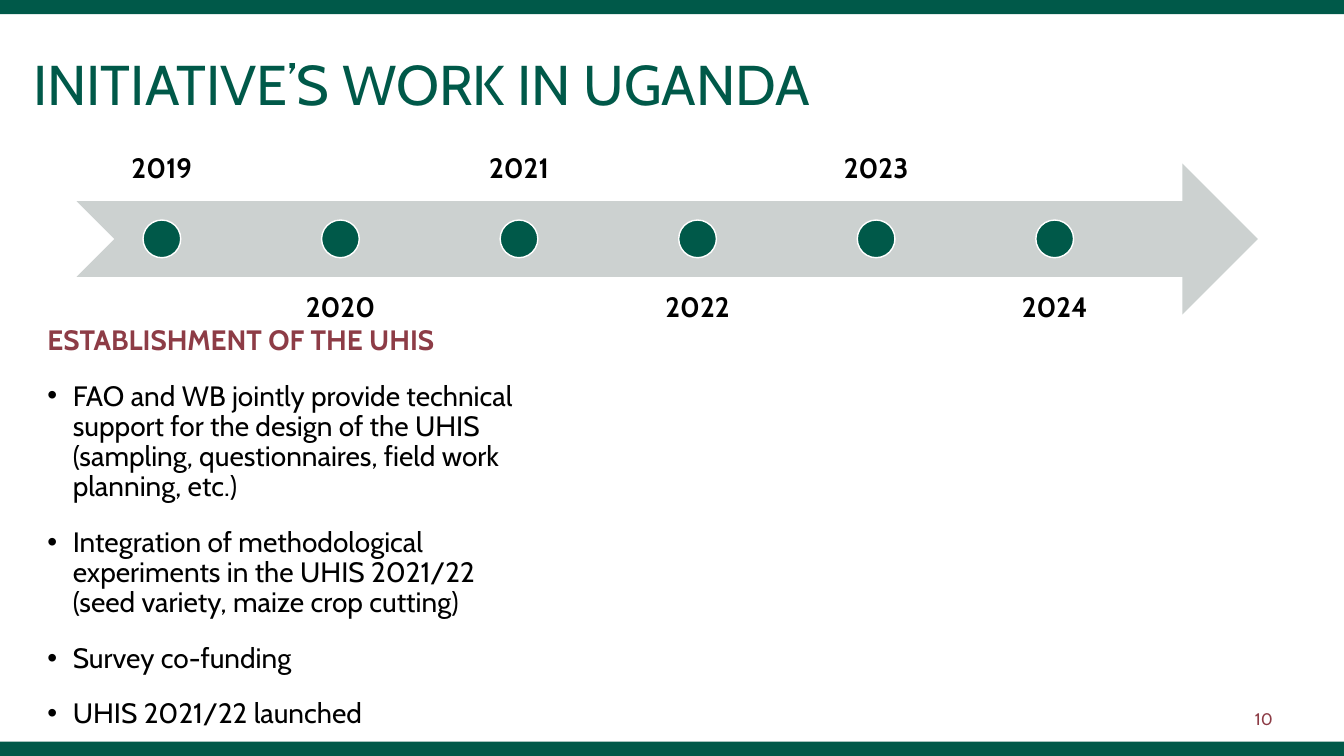
from dataclasses import dataclass

from lxml import etree
from pptx import Presentation
from pptx.dml.color import RGBColor
from pptx.enum.shapes import MSO_SHAPE
from pptx.enum.text import MSO_ANCHOR, MSO_AUTO_SIZE, PP_ALIGN
from pptx.oxml.ns import qn
from pptx.shapes.autoshape import Shape
from pptx.slide import Slide
from pptx.text.text import TextFrame, _Paragraph
from pptx.util import Cm, Pt

RECTANGLE, ELLIPSE = MSO_SHAPE.RECTANGLE, MSO_SHAPE.OVAL
NOTCHED_ARROW = MSO_SHAPE.NOTCHED_RIGHT_ARROW
TOP, MIDDLE, BOTTOM = MSO_ANCHOR.TOP, MSO_ANCHOR.MIDDLE, MSO_ANCHOR.BOTTOM
LEFT, CENTER, RIGHT = PP_ALIGN.LEFT, PP_ALIGN.CENTER, PP_ALIGN.RIGHT
NO_AUTOFIT = MSO_AUTO_SIZE.NONE

GREEN = RGBColor(0x00, 0x59, 0x49)
GREY = RGBColor(0xCC, 0xD1, 0xD0)
MAROON = RGBColor(0x8D, 0x3C, 0x46)
BLACK = RGBColor(0x00, 0x00, 0x00)
WHITE = RGBColor(0xFF, 0xFF, 0xFF)
FONT = "Cabin"

SLIDE_WIDTH, SLIDE_HEIGHT = 33.87, 19.05
BAR_HEIGHT = 0.36
FIRST_CENTER, YEAR_STEP = 4.08, 4.5
ARROW_MIDDLE, DOT_SIZE = 6.02, 0.95
LABEL_WIDTH, LABEL_HEIGHT, LABEL_INSET = 4.29, 3.81, 0.41
LABEL_TOP_ABOVE, LABEL_TOP_BELOW = 1.25, 6.98
YEARS = range(2019, 2025)

HEADING = "ESTABLISHMENT OF THE UHIS"
ACTIVITIES = [
    "FAO and WB jointly provide technical support for the design of the UHIS "
    "(sampling, questionnaires, field work planning, etc.)",
    "Integration of methodological experiments in the UHIS 2021/22 "
    "(seed variety, maize crop cutting)",
    "Survey co-funding",
    "UHIS 2021/22 launched",
]


@dataclass(frozen=True)
class Box:
    """Position and size in centimetres."""
    left: float
    top: float
    width: float
    height: float

    def lengths(self) -> tuple[Cm, Cm, Cm, Cm]:
        return Cm(self.left), Cm(self.top), Cm(self.width), Cm(self.height)


@dataclass(frozen=True)
class TextStyle:
    size: int
    color: RGBColor
    bold: bool = False
    align: PP_ALIGN = LEFT
    space_after: int = 0


TITLE_STYLE = TextStyle(40, GREEN)
YEAR_STYLE = TextStyle(20, BLACK, bold=True, align=CENTER)
HEADING_STYLE = TextStyle(20, MAROON, bold=True, space_after=18)
ACTIVITY_STYLE = TextStyle(20, BLACK, space_after=18)
NUMBER_STYLE = TextStyle(12, MAROON, align=RIGHT)


def add_filled(slide: Slide, kind: MSO_SHAPE, box: Box, fill: RGBColor) -> Shape:
    shape = slide.shapes.add_shape(kind, *box.lengths())
    shape.shadow.inherit = False
    shape.fill.solid()
    shape.fill.fore_color.rgb = fill
    shape.line.fill.background()
    return shape


def write(paragraph: _Paragraph, text: str, style: TextStyle) -> None:
    paragraph.text = text
    paragraph.alignment = style.align
    paragraph.line_spacing = 0.9
    paragraph.space_before = Pt(0)
    paragraph.space_after = Pt(style.space_after)
    for run in paragraph.runs:
        run.font.name = FONT
        run.font.size = Pt(style.size)
        run.font.bold = style.bold
        run.font.color.rgb = style.color


def set_bullet(paragraph: _Paragraph, char: str | None) -> None:
    """Give a hanging bullet, or remove the inherited one when char is None."""
    properties = paragraph._p.get_or_add_pPr()
    hang = Cm(0.64) if char else 0
    properties.set("marL", str(hang))
    properties.set("indent", str(-hang))
    if char:
        etree.SubElement(properties, qn("a:buChar")).set("char", char)
    else:
        etree.SubElement(properties, qn("a:buNone"))


def set_frame(frame: TextFrame, anchor: MSO_ANCHOR) -> None:
    frame.word_wrap = True
    frame.auto_size = NO_AUTOFIT
    frame.vertical_anchor = anchor


def place(placeholder: Shape, box: Box) -> TextFrame:
    (placeholder.left, placeholder.top,
     placeholder.width, placeholder.height) = box.lengths()
    set_frame(placeholder.text_frame, TOP)
    return placeholder.text_frame


def add_label(slide: Slide, text: str, box: Box, style: TextStyle,
              anchor: MSO_ANCHOR) -> TextFrame:
    frame = slide.shapes.add_textbox(*box.lengths()).text_frame
    set_frame(frame, anchor)
    write(frame.paragraphs[0], text, style)
    return frame


def add_timeline(slide: Slide) -> None:
    add_filled(slide, NOTCHED_ARROW, Box(1.93, 4.12, 29.77, 3.81), GREY)
    for index, year in enumerate(YEARS):
        center = FIRST_CENTER + index * YEAR_STEP
        above = index % 2 == 0
        label_box = Box(center - LABEL_WIDTH / 2,
                        LABEL_TOP_ABOVE if above else LABEL_TOP_BELOW,
                        LABEL_WIDTH, LABEL_HEIGHT)
        label = add_label(slide, str(year), label_box, YEAR_STYLE,
                          BOTTOM if above else TOP)
        label.margin_left = label.margin_right = Cm(LABEL_INSET)
        label.margin_top = label.margin_bottom = Cm(LABEL_INSET)
        dot_box = Box(center - DOT_SIZE / 2, ARROW_MIDDLE - DOT_SIZE / 2,
                      DOT_SIZE, DOT_SIZE)
        dot = add_filled(slide, ELLIPSE, dot_box, GREEN)
        dot.line.color.rgb = WHITE
        dot.line.width = Pt(1)


def add_activities(slide: Slide) -> None:
    frame = place(slide.placeholders[1], Box(0.94, 8.1, 12.37, 10.03))
    heading = frame.paragraphs[0]
    write(heading, HEADING, HEADING_STYLE)
    set_bullet(heading, None)
    for activity in ACTIVITIES:
        item = frame.add_paragraph()
        write(item, activity, ACTIVITY_STYLE)
        set_bullet(item, "•")


def main() -> None:
    presentation = Presentation()
    presentation.slide_width = Cm(SLIDE_WIDTH)
    presentation.slide_height = Cm(SLIDE_HEIGHT)
    slide = presentation.slides.add_slide(presentation.slide_layouts[1])

    for bar_top in (SLIDE_HEIGHT - BAR_HEIGHT, 0):
        add_filled(slide, RECTANGLE,
                   Box(0, bar_top, SLIDE_WIDTH, BAR_HEIGHT), GREEN)
    title = place(slide.shapes.title, Box(0.58, 1.32, 23.67, 1.98))
    write(title.paragraphs[0], "INITIATIVE’S WORK IN UGANDA", TITLE_STYLE)
    add_timeline(slide)
    add_activities(slide)
    add_label(slide, "10", Box(24.71, 17.63, 7.62, 1.02), NUMBER_STYLE, MIDDLE)

    presentation.save("out.pptx")


if __name__ == "__main__":
    main()
